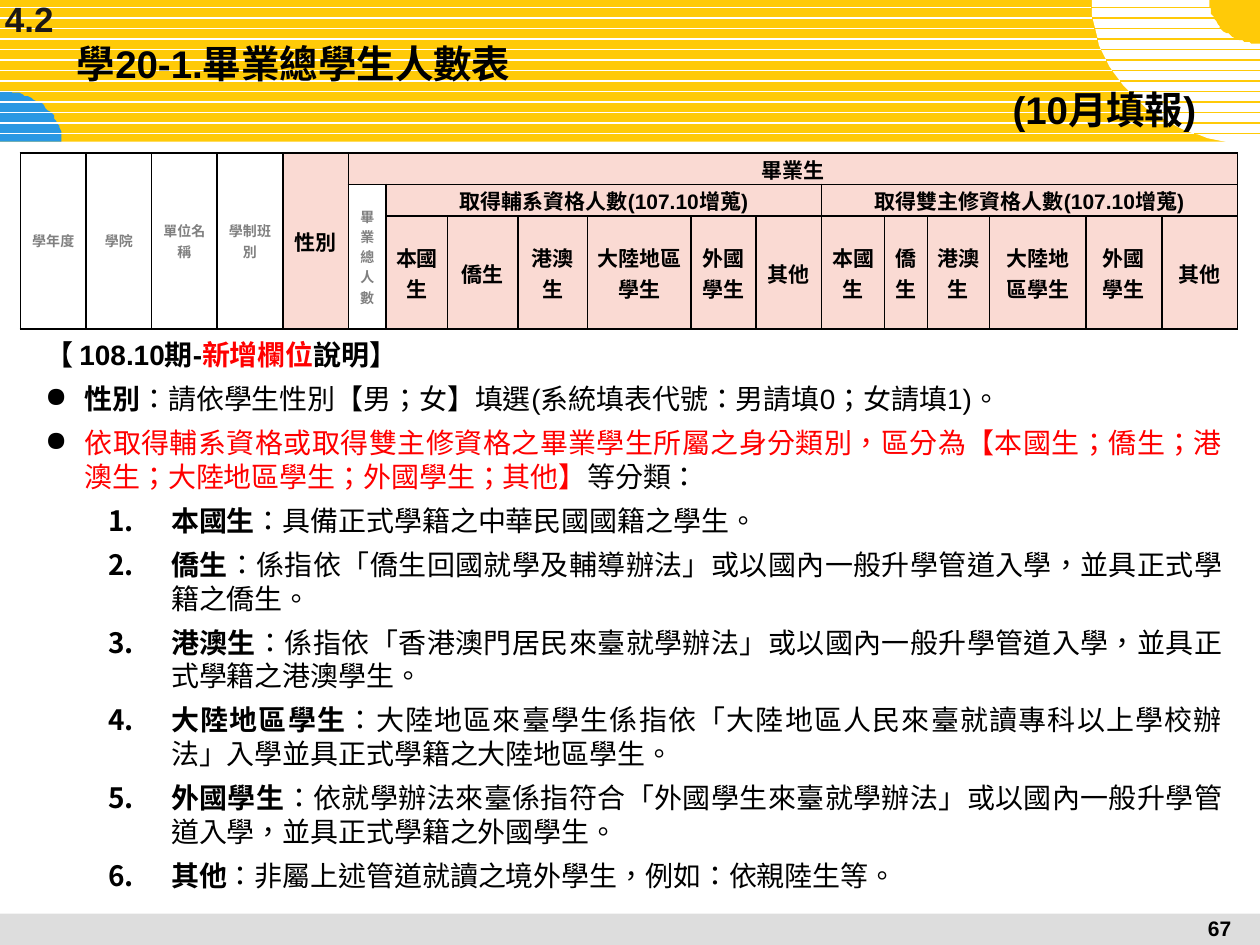
import math
import pptx
import pptx.util
import pptx.dml.color
import pptx.enum.dml
import pptx.enum.lang
import pptx.enum.shapes
import pptx.enum.text
import pptx.oxml
import pptx.oxml.ns
import lxml.etree

Pt = pptx.util.Pt
RGBColor = pptx.dml.color.RGBColor
ALIGN = pptx.enum.text.PP_ALIGN
MIDDLE = pptx.enum.text.MSO_ANCHOR.MIDDLE
RECTANGLE = pptx.enum.shapes.MSO_SHAPE.RECTANGLE
qn = pptx.oxml.ns.qn

BLACK = RGBColor(0x00, 0x00, 0x00)
WHITE = RGBColor(0xFF, 0xFF, 0xFF)
YELLOW = RGBColor(0xFF, 0xCA, 0x08)
BLUE = RGBColor(0x29, 0x98, 0xE3)
RED = RGBColor(0xFF, 0x00, 0x00)
GRAY = RGBColor(0x80, 0x80, 0x80)
LIGHT_GRAY = RGBColor(0xDD, 0xDD, 0xDD)
PINK = RGBColor(0xFA, 0xDA, 0xD3)
DARK = RGBColor(0x1C, 0x18, 0x15)

SECTION, PAGE = "4.2", "67"
TITLE = ["學20-1.畢業總學生人數表", "(10月填報)"]

COLUMN_WIDTHS = [37.5, 37.5, 37.5, 37.5, 37.5, 21.6, 35.2, 40.3, 39.6,
                 59, 37.4, 37.4, 36, 24.5, 35.3, 55.4, 43.2, 43.2]
ROW_HEIGHTS = [18, 18, 64.5]
STUDENT_TYPES = ["本國生", "僑生", "港澳生", "大陸地區學生", "外國學生", "其他"]
OLD_COLUMNS = ["學年度", "學院", "單位名稱", "學制班別"]
HEADERS = [(0, column, 3, 1, text, False) for column, text in enumerate(OLD_COLUMNS)]
HEADERS += [
    (0, 4, 3, 1, "性別", True),
    (0, 5, 1, 13, "畢業生", True),
    (1, 5, 2, 1, "畢業總人數", False),
    (1, 6, 1, 6, "取得輔系資格人數(107.10增蒐)", True),
    (1, 12, 1, 6, "取得雙主修資格人數(107.10增蒐)", True),
]
HEADERS += [(2, 6 + column, 1, 1, text, True)
            for column, text in enumerate(STUDENT_TYPES * 2)]

NOTES = [
    (None, [("【 108.10期-", True, BLACK), ("新增欄位", True, RED), ("說明】", True, BLACK)]),
    ("dot", [("性別", True, BLACK),
             ("：請依學生性別【男；女】填選(系統填表代號：男請填0；女請填1)。", False, BLACK)]),
    ("dot", [("依取得輔系資格或取得雙主修資格之畢業學生所屬之身分類別，區分為"
              "【本國生；僑生；港澳生；大陸地區學生；外國學生；其他】", False, RED),
             ("等分類：", False, BLACK)]),
]
DEFINITIONS = [
    "具備正式學籍之中華民國國籍之學生。",
    "係指依「僑生回國就學及輔導辦法」或以國內一般升學管道入學，並具正式學籍之僑生。",
    "係指依「香港澳門居民來臺就學辦法」或以國內一般升學管道入學，並具正式學籍之港澳學生。",
    "大陸地區來臺學生係指依「大陸地區人民來臺就讀專科以上學校辦法」入學並具正式學籍之大陸地區學生。",
    "依就學辦法來臺係指符合「外國學生來臺就學辦法」或以國內一般升學管道入學，並具正式學籍之外國學生。",
    "非屬上述管道就讀之境外學生，例如：依親陸生等。",
]
NOTES += [("number", [(name, True, BLACK), ("：" + text, False, BLACK)])
          for name, text in zip(STUDENT_TYPES, DEFINITIONS)]
BULLETS = {
    "dot": (22.5, -22.5, "buChar", {"char": "●"}),
    "number": (72, -36, "buAutoNum", {"type": "arabicPeriod"}),
}


def apply(target, values):
    for name, value in values.items():
        setattr(target, name, value)


def write(paragraph, text, size, color, bold=True):
    run = paragraph.add_run()
    run.text = text
    apply(run.font, {"size": Pt(size), "bold": bold, "name": "Arial",
                     "language_id": pptx.enum.lang.MSO_LANGUAGE_ID.TRADITIONAL_CHINESE})
    run.font.color.rgb = color


def add_text(slide, left, top, width, height):
    frame = slide.shapes.add_textbox(Pt(left), Pt(top), Pt(width), Pt(height)).text_frame
    frame.word_wrap = True
    return frame


def paint(shape, color):
    shape.shadow.inherit = False
    shape.fill.solid()
    shape.fill.fore_color.rgb = color
    shape.line.fill.background()


def add_band(slide, top, height, color):
    paint(slide.shapes.add_shape(RECTANGLE, 0, Pt(top), Pt(720), Pt(height)), color)


def add_quarter(slide, center, radius_x, radius_y, color):
    angles = [math.pi / 2 * step / 30 for step in range(31)]
    points = [(center[0] + radius_x * math.cos(angle), center[1] + radius_y * math.sin(angle))
              for angle in angles]
    builder = slide.shapes.build_freeform(*center, scale=Pt(1))
    builder.add_line_segments(points, close=True)
    paint(builder.convert_to_shape(), color)


def add_stripe(slide, left, y, color, width):
    line = slide.shapes.add_connector(pptx.enum.shapes.MSO_CONNECTOR.STRAIGHT,
                                      Pt(left), Pt(y), Pt(720), Pt(y))
    line.line.color.rgb = color
    line.line.width = Pt(width)
    lxml.etree.SubElement(line.element.spPr, qn("a:effectLst"))


def add_background(slide):
    stripes = [4.3 + 6 * index for index in range(13)]
    add_band(slide, 0, 81, YELLOW)
    add_quarter(slide, (0, 81), 35.3, -29, BLUE)
    for y in stripes:
        add_stripe(slide, 0, y, WHITE, 1)
    radius_x, radius_y = 96.5, 82.8
    add_quarter(slide, (720, 0), -radius_x, radius_y, WHITE)
    for y in stripes:
        add_stripe(slide, 720 - radius_x * math.sqrt(1 - (y / radius_y) ** 2), y, YELLOW, 0.75)
    add_band(slide, 522, 18, LIGHT_GRAY)
    add_quarter(slide, (720, 0), -29, 25, YELLOW)


def add_title(slide):
    title = slide.shapes.title
    apply(title, {"left": Pt(36.7), "top": Pt(18), "width": Pt(676.8), "height": Pt(62.6)})
    title.element.getparent().append(title.element)
    frame = title.text_frame
    apply(frame, {"vertical_anchor": MIDDLE, "margin_right": Pt(30), "word_wrap": True,
                  "auto_size": pptx.enum.text.MSO_AUTO_SIZE.NONE})
    paragraphs = [frame.paragraphs[0], frame.add_paragraph()]
    for paragraph, text, alignment in zip(paragraphs, TITLE, [ALIGN.LEFT, ALIGN.RIGHT]):
        apply(paragraph, {"alignment": alignment, "line_spacing": Pt(26.4),
                          "space_before": Pt(0)})
        write(paragraph, text, 22, BLACK)


def add_borders(cell):
    properties = cell._tc.get_or_add_tcPr()
    for side in ("lnL", "lnR", "lnT", "lnB"):
        line = lxml.etree.SubElement(properties, qn("a:" + side), w=str(Pt(1)))
        fill = lxml.etree.SubElement(line, qn("a:solidFill"))
        lxml.etree.SubElement(fill, qn("a:srgbClr"), val=str(BLACK))


def add_header_table(slide):
    table = slide.shapes.add_table(len(ROW_HEIGHTS), len(COLUMN_WIDTHS), Pt(11.7), Pt(87.4),
                                   Pt(sum(COLUMN_WIDTHS)), Pt(sum(ROW_HEIGHTS))).table
    apply(table, {"first_row": False, "horz_banding": False})
    for column, width in zip(table.columns, COLUMN_WIDTHS):
        column.width = Pt(width)
    for row, height in zip(table.rows, ROW_HEIGHTS):
        row.height = Pt(height)
    for cell in table.iter_cells():
        add_borders(cell)
        cell.fill.background()
        apply(cell, {"margin_left": Pt(5), "margin_right": Pt(5), "margin_top": 0,
                     "margin_bottom": 0, "vertical_anchor": MIDDLE})
    for row, column, height, width, text, highlighted in HEADERS:
        cell = table.cell(row, column)
        if height * width > 1:
            cell.merge(table.cell(row + height - 1, column + width - 1))
        if highlighted:
            cell.fill.solid()
            cell.fill.fore_color.rgb = PINK
        paragraph = cell.text_frame.paragraphs[0]
        apply(paragraph, {"alignment": ALIGN.CENTER,
                          "line_spacing": Pt(18 if highlighted else 11.5)})
        write(paragraph, text, 12 if highlighted else 8, BLACK if highlighted else GRAY)


def add_notes_text(slide):
    frame = add_text(slide, 18.7, 189.4, 687.6, 330.5)
    for index, (bullet, runs) in enumerate(NOTES):
        paragraph = frame.add_paragraph() if index else frame.paragraphs[0]
        apply(paragraph, {"alignment": ALIGN.JUSTIFY, "line_spacing": Pt(19.2),
                          "space_before": Pt(3), "space_after": Pt(3)})
        if bullet:
            margin, indent, tag, attributes = BULLETS[bullet]
            properties = paragraph._p.get_or_add_pPr()
            properties.set("marL", str(Pt(margin)))
            properties.set("indent", str(Pt(indent)))
            color = lxml.etree.SubElement(properties, qn("a:buClr"))
            lxml.etree.SubElement(color, qn("a:srgbClr"), val=str(BLACK))
            lxml.etree.SubElement(properties, qn("a:" + tag), **attributes)
        for text, bold, color in runs:
            write(paragraph, text, 16, color, bold)


def main():
    presentation = pptx.Presentation()
    apply(presentation, {"slide_width": Pt(720), "slide_height": Pt(540)})
    slide = presentation.slides.add_slide(presentation.slide_layouts[5])
    add_background(slide)
    page = add_text(slide, 673.9, 519.8, 46, 20).paragraphs[0]
    page.alignment = ALIGN.CENTER
    write(page, PAGE, 12, BLACK)
    add_notes_text(slide)
    write(add_text(slide, -4.3, -5, 70, 31.5).paragraphs[0], SECTION, 20, DARK)
    add_title(slide)
    add_header_table(slide)
    presentation.save("out.pptx")


if __name__ == "__main__":
    main()
